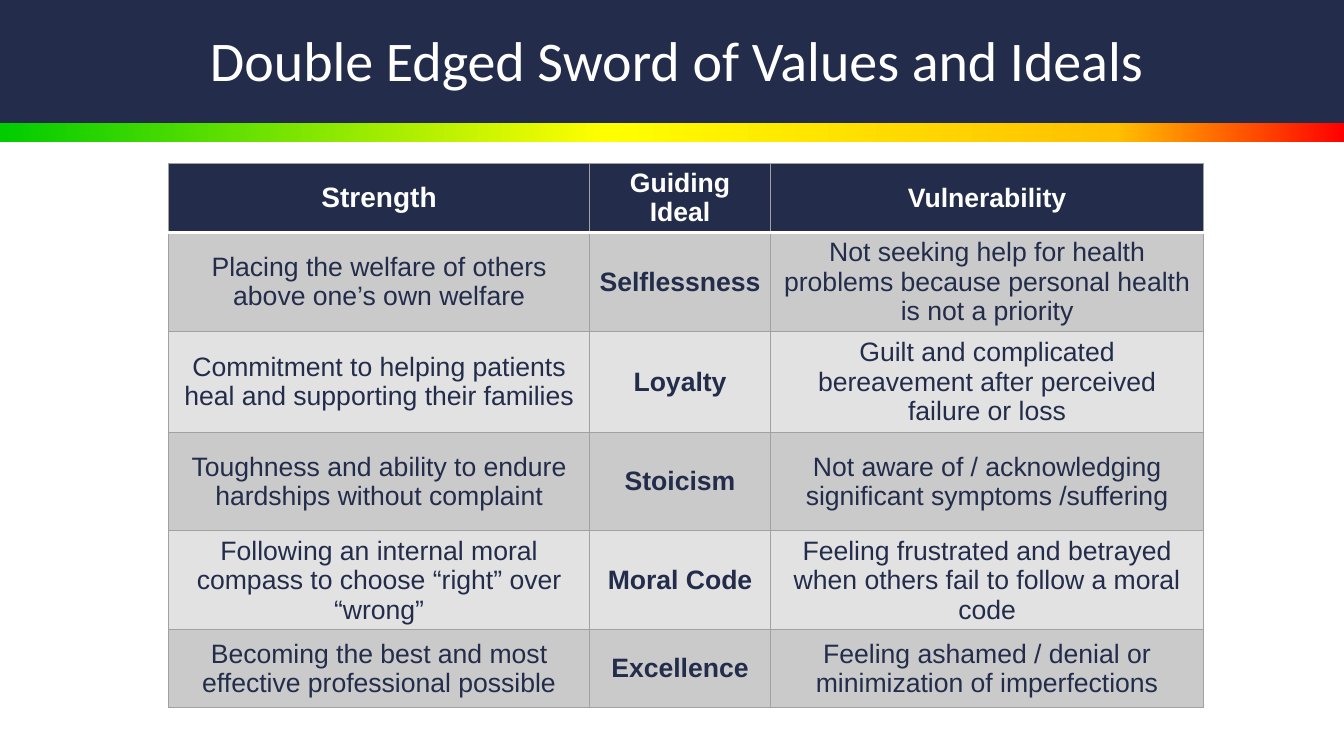
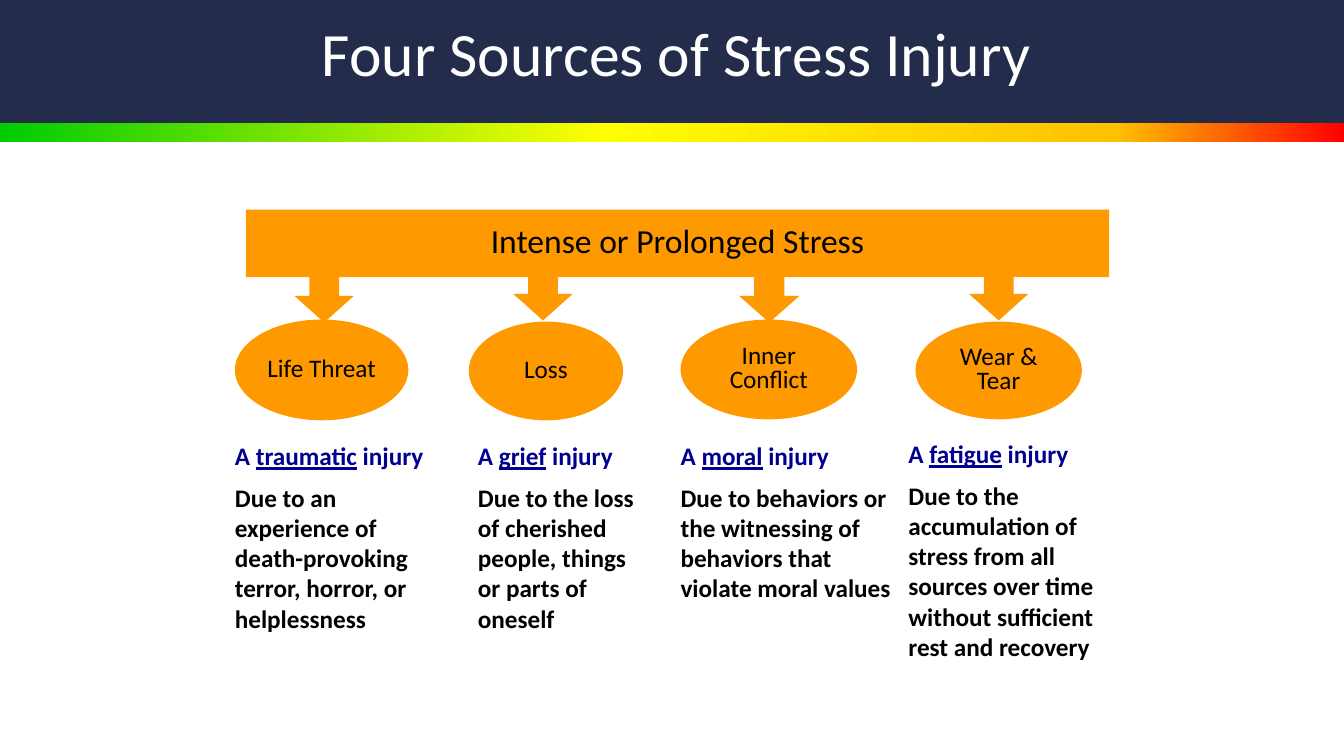
from dataclasses import dataclass
from typing import NamedTuple

from lxml import etree
from pptx import Presentation
from pptx.dml.color import RGBColor
from pptx.enum.shapes import MSO_SHAPE
from pptx.enum.text import MSO_ANCHOR, PP_ALIGN
from pptx.oxml.ns import qn
from pptx.util import Emu, Pt

PX = 9144  # 100 px to the inch
WIDE, HIGH = 1333, 750

RECT, OVAL, ARROW = MSO_SHAPE.RECTANGLE, MSO_SHAPE.OVAL, MSO_SHAPE.DOWN_ARROW
CENTER, LEFT = PP_ALIGN.CENTER, PP_ALIGN.LEFT
MIDDLE, TOP = MSO_ANCHOR.MIDDLE, MSO_ANCHOR.TOP

NAVY = RGBColor(0x23, 0x2D, 0x4B)
WHITE = RGBColor(0xFF, 0xFF, 0xFF)
BLACK = RGBColor(0x00, 0x00, 0x00)
BLUE = RGBColor(0x00, 0x00, 0x90)
ORANGE = RGBColor(0xFF, 0x99, 0x00)
EDGE = RGBColor(0xA1, 0xA1, 0xA1)
DARK = RGBColor(0xCA, 0xCA, 0xCA)
LIGHT = RGBColor(0xE2, 0xE2, 0xE2)
SCALE = [
    (0, RGBColor(0x00, 0xCC, 0x00)),
    (45, RGBColor(0xFF, 0xFF, 0x00)),
    (83, RGBColor(0xFF, 0xC0, 0x00)),
    (100, RGBColor(0xFF, 0x00, 0x00)),
]
SANS, ARIAL = "Calibri", "Arial"


class Box(NamedTuple):
    x: int
    y: int
    w: int
    h: int

    def emu(self) -> list[Emu]:
        return [Emu(v * PX) for v in self]


@dataclass(frozen=True)
class Style:
    size: int
    color: RGBColor
    font: str = SANS
    bold: bool = False


@dataclass(frozen=True)
class Source:
    name: str
    oval: Box
    arrow: Box
    note: Box
    kind: str
    cause: str


LABEL = Style(18, BLACK)
NOTE_HEAD = Style(18, BLUE, bold=True)
NOTE = Style(18, BLACK, bold=True)

COLS = [418, 179, 430]
ROWS = [54, 98, 100, 98, 98, 77]
VALUES = [
    ("Strength", "Guiding Ideal", "Vulnerability"),
    ("Placing the welfare of others above one’s own welfare", "Selflessness",
     "Not seeking help for health problems because personal health is not a priority"),
    ("Commitment to helping patients heal and supporting their families", "Loyalty",
     "Guilt and complicated bereavement after perceived failure or loss"),
    ("Toughness and ability to endure hardships without complaint", "Stoicism",
     "Not aware of / acknowledging significant symptoms /suffering"),
    ("Following an internal moral compass to choose “right” over “wrong”", "Moral Code",
     "Feeling frustrated and betrayed when others fail to follow a moral code"),
    ("Becoming the best and most effective professional possible", "Excellence",
     "Feeling ashamed / denial or minimization of imperfections"),
]

SOURCES = [
    Source("Life Threat", Box(233, 317, 172, 100), Box(292, 267, 59, 53),
           Box(233, 437, 197, 234), "traumatic",
           "Due to an experience of death-provoking terror, horror, or helplessness"),
    Source("Loss", Box(465, 319, 153, 98), Box(509, 265, 59, 53),
           Box(474, 437, 174, 193), "grief",
           "Due to the loss of cherished people, things or parts of oneself"),
    Source("Inner Conflict", Box(675, 317, 175, 99), Box(733, 267, 60, 53),
           Box(675, 437, 211, 161), "moral",
           "Due to behaviors or the witnessing of behaviors that violate moral values"),
    Source("Wear & Tear", Box(908, 319, 165, 97), Box(961, 265, 59, 53),
           Box(901, 435, 216, 262), "fatigue",
           "Due to the accumulation of stress from all sources over time "
           "without sufficient rest and recovery"),
]


def add_run(para, text: str, style: Style, under: bool = False) -> None:
    run = para.add_run()
    run.text = text
    font = run.font
    font.name, font.size, font.bold = style.font, Pt(style.size), style.bold
    font.color.rgb = style.color
    if under:
        font.underline = True


def set_frame(frame, anchor, inset: int = 0) -> None:
    frame.word_wrap = True
    frame.vertical_anchor = anchor
    frame.margin_left = frame.margin_right = Emu(inset * PX)
    frame.margin_top = frame.margin_bottom = Emu(inset * PX // 2)


def add_block(slide, kind, box: Box, color: RGBColor):
    shape = slide.shapes.add_shape(kind, *box.emu())
    shape.shadow.inherit = False
    shape.fill.solid()
    shape.fill.fore_color.rgb = color
    shape.line.fill.background()
    return shape


def add_label(slide, kind, box: Box, text: str, style: Style) -> None:
    frame = add_block(slide, kind, box, ORANGE).text_frame
    set_frame(frame, MIDDLE)
    para = frame.paragraphs[0]
    para.alignment, para.line_spacing = CENTER, 0.8
    add_run(para, text, style)


def blend(shape) -> None:
    """Fill a shape with the green-to-red scale, left to right."""
    shape.fill.gradient()
    shape.fill.gradient_angle = 0
    stops = shape.element.spPr.find(".//" + qn("a:gsLst"))
    stops.clear()
    for place, color in SCALE:
        stop = etree.SubElement(stops, qn("a:gs"), pos=str(place * 1000))
        etree.SubElement(stop, qn("a:srgbClr"), val=str(color))


def add_bands(slide, layout) -> None:
    """Draw the top bands and move them to the shared layout."""
    strip = add_block(slide, RECT, Box(0, 122, WIDE, 19), NAVY)
    blend(strip)
    head = add_block(slide, RECT, Box(0, 0, WIDE, 122), NAVY)
    for spot, band in enumerate((strip, head), start=2):
        layout.shapes.element.insert(spot, band.element)


def set_title(slide, text: str, box: Box, size: int) -> None:
    title = slide.shapes.title
    title.left, title.top, title.width, title.height = box.emu()
    set_frame(title.text_frame, MIDDLE, 10)
    para = title.text_frame.paragraphs[0]
    para.alignment, para.line_spacing = CENTER, 0.9
    add_run(para, text, Style(size, WHITE))


def set_edge(cell, side: str, color: RGBColor, width: float) -> None:
    line = etree.SubElement(cell._tc.get_or_add_tcPr(), qn("a:ln" + side), w=str(Pt(width)))
    fill = etree.SubElement(line, qn("a:solidFill"))
    etree.SubElement(fill, qn("a:srgbClr"), val=str(color))


def fill_cell(cell, text: str, row: int, col: int) -> None:
    for side in "LRTB":
        rule = (row, side) in ((0, "B"), (1, "T"))
        set_edge(cell, side, WHITE if rule else EDGE, 2 if rule else 0.75)
    head = row == 0
    cell.fill.solid()
    cell.fill.fore_color.rgb = NAVY if head else DARK if row % 2 else LIGHT
    cell.vertical_anchor = MIDDLE
    cell.margin_left = cell.margin_right = Emu(8 * PX)
    para = cell.text_frame.paragraphs[0]
    para.alignment = CENTER
    size = 20 if head and col == 0 else 19
    add_run(para, text, Style(size, WHITE if head else NAVY, ARIAL, head or col == 1))


def add_values(slide) -> None:
    box = Box(167, 162, sum(COLS), sum(ROWS))
    table = slide.shapes.add_table(len(ROWS), len(COLS), *box.emu()).table
    table.horz_banding = False
    for col, width in enumerate(COLS):
        table.columns[col].width = Emu(width * PX)
    for row, texts in enumerate(VALUES):
        table.rows[row].height = Emu(ROWS[row] * PX)
        for col, text in enumerate(texts):
            fill_cell(table.cell(row, col), text, row, col)


def add_source(slide, source: Source) -> None:
    add_label(slide, OVAL, source.oval, source.name, LABEL)
    add_block(slide, ARROW, source.arrow, ORANGE)
    frame = slide.shapes.add_textbox(*source.note.emu()).text_frame
    set_frame(frame, TOP)
    head = frame.paragraphs[0]
    add_run(head, "A ", NOTE_HEAD)
    add_run(head, source.kind, NOTE_HEAD, under=True)
    add_run(head, " injury", NOTE_HEAD)
    cause = frame.add_paragraph()
    cause.space_before = Pt(8)
    add_run(cause, source.cause, NOTE)
    head.alignment = cause.alignment = LEFT


def main() -> None:
    deck = Presentation()
    deck.slide_width, deck.slide_height = Emu(WIDE * PX), Emu(HIGH * PX)
    layout = deck.slide_layouts.get_by_name("Title Only")

    slide = deck.slides.add_slide(layout)
    add_bands(slide, layout)
    set_title(slide, "Double Edged Sword of Values and Ideals", Box(167, 8, 1008, 110), 40)
    add_values(slide)

    slide = deck.slides.add_slide(layout)
    set_title(slide, "Four Sources of Stress Injury", Box(93, 1, 1156, 110), 44)
    for source in SOURCES:
        add_source(slide, source)
    add_label(slide, RECT, Box(244, 208, 856, 67), "Intense or Prolonged Stress", Style(24, BLACK))

    deck.save("out.pptx")


if __name__ == "__main__":
    main()
